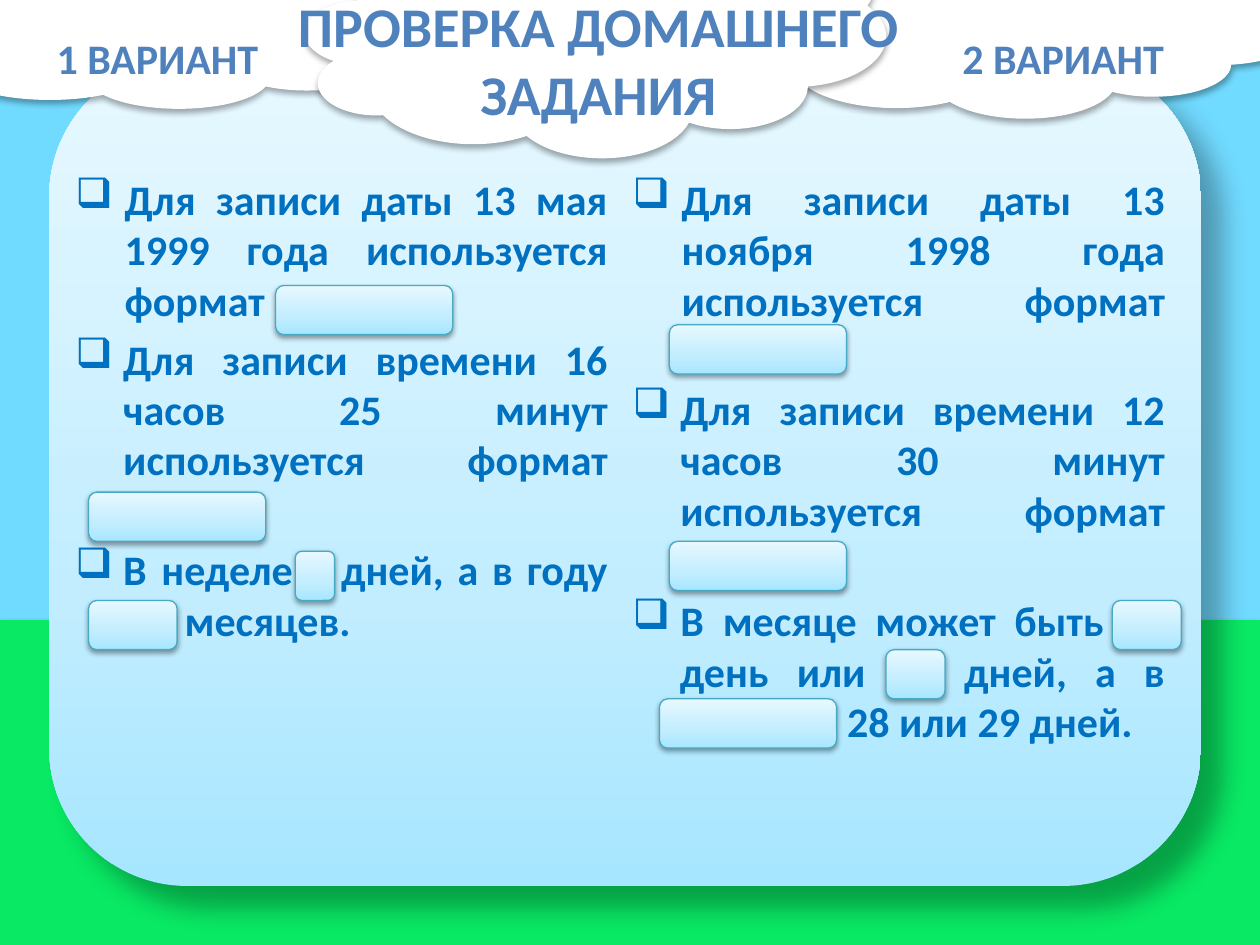
from copy import deepcopy

from lxml import etree
from pptx import Presentation
from pptx import util as u
from pptx.dml.color import RGBColor
from pptx.enum import shapes, text
from pptx.oxml import ns

COLORS = {
    "sky": "71DAFF",
    "grass": "09E964",
    "cloud": "FFFFFF",
    "heading": "4F81BD",
    "question": "0070C0",
    "outline": "46AAC5",
    "shadow": "000000",
}
ICE = [(0, "A7E6FF"), (0.35, "C1EDFF"), (1, "E7F8FF")]
COLUMNS, ROWS = 128, 96
WIDTH, HEIGHT = u.Inches(10), u.Inches(7.5)
LINE_ROWS = 5.15
FILLED_LINE = "|"

CLOUDS = [(74, -6, 59, 18), (-12, -4, 59, 15), (31, -8, 59, 24)]
VARIANTS = [
    {
        "label": "1 ВАРИАНТ",
        "label_column": 4,
        "text_column": 6.4,
        "questions": [
            "Для записи даты 13 мая 1999 года используется формат",
            "Для записи времени 16 часов 25 минут используется формат|",
        ],
        "gap_row": 54.6,
        "pieces": [
            ("В неделе|", 6.4, 0, 24.6),
            ("дней, а в году|", 33.4, 0, 29.6),
            ("месяцев.", 17.5, 1, 24),
        ],
        "covers": [(28, 29, 18), (9, 50, 18), (9, 61, 9), (30, 56, 4)],
    },
    {
        "label": "2 ВАРИАНТ",
        "label_column": 96,
        "text_column": 63,
        "questions": [
            "Для записи даты 13 ноября 1998 года используется формат|",
            "Для записи времени 12 часов 30 минут используется формат|",
        ],
        "gap_row": 54.6 + LINE_ROWS,
        "pieces": [
            ("В месяце может быть|", 63, 0, 50.4),
            ("день или|", 67.8, 1, 21.4),
            ("дней, а в|", 96.7, 1, 22.9),
            ("28 или 29 дней.", 84.8, 2, 34),
        ],
        "covers": [(68, 33, 18), (68, 55, 18), (67, 71, 18), (90, 66, 6), (113, 61, 7)],
    },
]


def color(name):
    return RGBColor.from_string(COLORS[name])


def place(column, row, columns, rows):
    return (
        round(WIDTH * column / COLUMNS),
        round(HEIGHT * row / ROWS),
        round(WIDTH * columns / COLUMNS),
        round(HEIGHT * rows / ROWS),
    )


def add_shadow(shape, opacity, blur, distance, angle):
    shape.shadow.inherit = False
    effects = shape._element.spPr.find(ns.qn("a:effectLst"))
    outer = etree.SubElement(
        effects, ns.qn("a:outerShdw"), blurRad=str(u.Pt(blur)),
        dist=str(u.Pt(distance)), dir=str(angle * 60000), rotWithShape="0",
    )
    tone = etree.SubElement(outer, ns.qn("a:srgbClr"), val=COLORS["shadow"])
    etree.SubElement(tone, ns.qn("a:alpha"), val=str(opacity * 1000))


def fill_ice(shape):
    shape.fill.gradient()
    shape.fill.gradient_angle = 90
    stops = shape._element.spPr.find(".//" + ns.qn("a:gsLst"))
    stops.append(deepcopy(stops[0]))
    for stop, (position, tone) in zip(shape.fill.gradient_stops, ICE):
        stop.position = position
        stop.color.rgb = RGBColor.from_string(tone)


def add_figure(page, kind, area, shadow, fill=None, outline=None):
    shape = page.shapes.add_shape(kind, *place(*area))
    if fill:
        shape.fill.solid()
        shape.fill.fore_color.rgb = color(fill)
    else:
        fill_ice(shape)
    if outline:
        shape.line.color.rgb = color(outline)
        shape.line.width = u.Pt(0.75)
    else:
        shape.line.fill.background()
    add_shadow(shape, *shadow)


def add_bullet(para, indent):
    properties = para._p.get_or_add_pPr()
    properties.set("marL", str(u.Inches(indent)))
    properties.set("indent", str(-u.Inches(indent)))
    etree.SubElement(properties, ns.qn("a:buChar"), char="❑")


def write_text(box, lines, size=24, tone="heading", align=text.PP_ALIGN.CENTER,
               anchor=text.MSO_ANCHOR.TOP, before=0.0, indents=()):
    frame = box.text_frame
    frame.word_wrap = True
    frame.auto_size = text.MSO_AUTO_SIZE.NONE
    frame.vertical_anchor = anchor
    for index, line in enumerate(lines):
        para = frame.add_paragraph() if index else frame.paragraphs[0]
        para.alignment = align
        para.space_before = u.Pt(before)
        if indents:
            add_bullet(para, indents[index])
        span = para.add_run()
        span.text = line.removesuffix(FILLED_LINE)
        span.font.name = "Calibri"
        span.font.size = u.Pt(size)
        span.font.bold = True
        span.font.color.rgb = color(tone)
        if line.endswith(FILLED_LINE):
            para.add_line_break()
            para._p.get_or_add_endParaRPr().set("sz", str(size * 100))


def add_scenery(page):
    kinds = shapes.MSO_SHAPE
    soft = (32, 3.5, 2.2, 90)
    page.background.fill.solid()
    page.background.fill.fore_color.rgb = color("sky")
    add_figure(page, kinds.FLOWCHART_PROCESS, (0, 63, 128, 33), soft, fill="grass")
    add_figure(page, kinds.ROUNDED_RECTANGLE, (5, 6, 117, 84), (30, 15, 18, 45))
    for area in CLOUDS:
        add_figure(page, kinds.CLOUD, area, soft, fill="cloud")


def add_title(page):
    title = page.shapes.title
    title.left, title.top, title.width, title.height = place(19, 0, 83.6, 12)
    title._element.getparent().append(title._element)
    write_text(title, ["ПРОВЕРКА ДОМАШНЕГО ЗАДАНИЯ"], size=32,
               anchor=text.MSO_ANCHOR.MIDDLE)


def add_question(page, area, lines, indents=()):
    box = page.shapes.add_textbox(*place(*area))
    write_text(box, lines, tone="question", align=text.PP_ALIGN.JUSTIFY,
               before=4.8, indents=indents)


def add_variant(page, variant):
    label = page.shapes.add_textbox(*place(variant["label_column"], 2, 24, 7))
    write_text(label, [variant["label"]], anchor=text.MSO_ANCHOR.BOTTOM, before=4.8)
    left = variant["text_column"]
    add_question(page, (left, 17, 56.6, 37), variant["questions"], (0.39, 0.38))
    for line, column, step, columns in variant["pieces"]:
        row = variant["gap_row"] + step * LINE_ROWS
        indents = (0.38,) if column == left else ()
        add_question(page, (column, row, columns, LINE_ROWS), [line], indents)
    for column, row, columns in variant["covers"]:
        add_figure(page, shapes.MSO_SHAPE.ROUNDED_RECTANGLE, (column, row, columns, 5),
                   (38, 3.1, 1.6, 90), outline="outline")


def main():
    deck = Presentation()
    deck.slide_width, deck.slide_height = WIDTH, HEIGHT
    page = deck.slides.add_slide(deck.slide_layouts[5])
    add_scenery(page)
    add_title(page)
    for variant in VARIANTS:
        add_variant(page, variant)
    deck.save("out.pptx")


if __name__ == "__main__":
    main()
